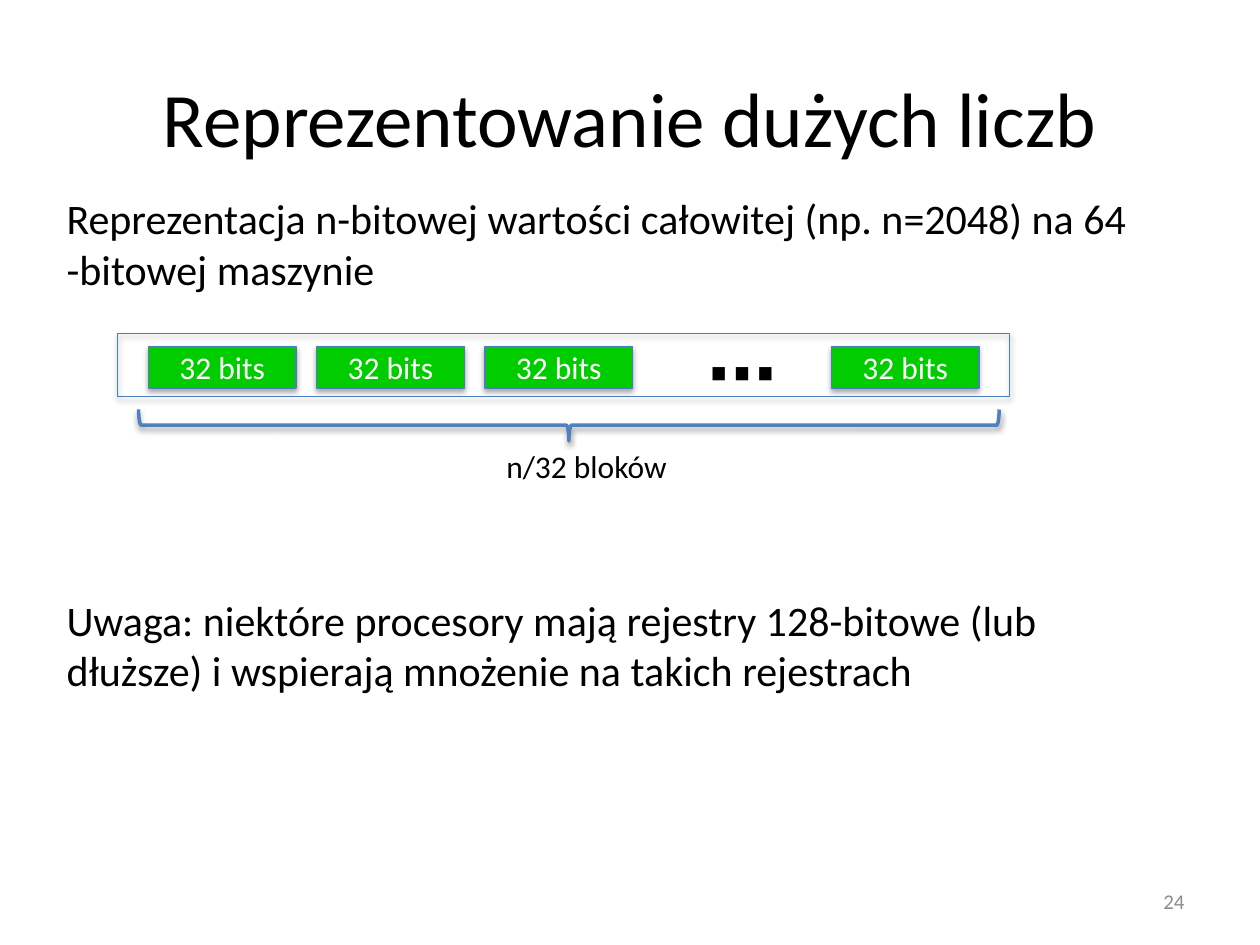
import dataclasses

import pptx
import pptx.dml.color
import pptx.enum.shapes
import pptx.enum.text
import pptx.oxml
import pptx.oxml.ns
import pptx.util
from pptx.util import Inches

ALIGN = pptx.enum.text.PP_ALIGN
ANCHOR = pptx.enum.text.MSO_ANCHOR
SHAPE = pptx.enum.shapes.MSO_SHAPE


@dataclasses.dataclass(frozen=True)
class Theme:
    font: str = "Calibri"
    ink: str = "000000"
    muted: str = "8C8C8C"
    light: str = "FFFFFF"
    block: str = "00CC00"
    outline: str = "4B7EBC"
    brace: str = "4F81BD"
    title_size: int = 44
    dots_size: int = 40
    body_size: int = 24
    label_size: int = 18
    number_size: int = 12


THEME = Theme()


def rgb(value):
    return pptx.dml.color.RGBColor.from_string(value)


def write(frame, paragraphs, size, color=THEME.ink, align=ALIGN.LEFT,
          anchor=ANCHOR.TOP, bold=False, wrap=True):
    """Fill a text frame and format all of its runs alike."""
    frame.text = "\n".join(paragraphs)
    frame.word_wrap = wrap
    frame.vertical_anchor = anchor
    for paragraph in frame.paragraphs:
        paragraph.alignment = align
        for run in paragraph.runs:
            run.font.name = THEME.font
            run.font.size = pptx.util.Pt(size)
            run.font.bold = bold
            run.font.color.rgb = rgb(color)


def add_text(slide, box, paragraphs, size, **style):
    frame = slide.shapes.add_textbox(*map(Inches, box)).text_frame
    write(frame, paragraphs, size, **style)
    return frame


def add_shadow(shape, opacity, distance):
    """Give a shape a soft shadow that falls straight down."""
    shape.shadow.inherit = False
    effects = shape._element.spPr.find(pptx.oxml.ns.qn("a:effectLst"))
    effects.append(pptx.oxml.parse_xml(
        f'<a:outerShdw {pptx.oxml.ns.nsdecls("a")} blurRad="{pptx.util.Pt(3.1)}" '
        f'dist="{pptx.util.Pt(distance)}" dir="5400000" rotWithShape="0">'
        f'<a:srgbClr val="{THEME.ink}"><a:alpha val="{opacity * 1000}"/></a:srgbClr>'
        '</a:outerShdw>'))


def add_outlined(slide, kind, box, line=THEME.outline, width=0.75, fill=None,
                 opacity=35, distance=1.8):
    shape = slide.shapes.add_shape(kind, *map(Inches, box))
    if fill:
        shape.fill.solid()
        shape.fill.fore_color.rgb = rgb(fill)
    else:
        shape.fill.background()
    shape.line.color.rgb = rgb(line)
    shape.line.width = pptx.util.Pt(width)
    add_shadow(shape, opacity, distance)
    return shape


def add_block(slide, left):
    block = add_outlined(slide, SHAPE.RECTANGLE, (left, 2.75, 1.17, 0.33),
                         fill=THEME.block)
    write(block.text_frame, ["32 bits"], THEME.label_size, color=THEME.light,
          align=ALIGN.CENTER, anchor=ANCHOR.MIDDLE)


def main():
    deck = pptx.Presentation()
    deck.slide_width, deck.slide_height = Inches(10), Inches(7.5)
    slide = deck.slides.add_slide(deck.slide_layouts.get_by_name("Title Only"))

    # Title and slide number
    title = slide.shapes.title
    title.left, title.top, title.width, title.height = map(Inches, (0.5, 0.3, 9, 1.25))
    write(title.text_frame, ["Reprezentowanie dużych liczb"], THEME.title_size,
          align=ALIGN.CENTER, anchor=ANCHOR.MIDDLE)
    add_text(slide, (7.17, 6.95, 2.33, 0.4), ["24"], THEME.number_size,
             color=THEME.muted, align=ALIGN.RIGHT, anchor=ANCHOR.MIDDLE)

    # Statement and remark, with room for the diagram between them
    body = add_text(slide, (0.43, 1.48, 9, 4.48), [
        "Reprezentacja n-bitowej wartości całowitej (np. n=2048) na 64 -bitowej maszynie",
        "Uwaga: niektóre procesory mają rejestry 128-bitowe (lub dłuższe) "
        "i wspierają mnożenie na takich rejestrach",
    ], THEME.body_size)
    body.paragraphs[1].space_before = pptx.util.Pt(172)

    # Blocks of the number: the first three, dots, and the last one
    first_left, pitch, last_left = 1.18, 1.335, 6.6
    for left in [first_left + pitch * i for i in range(3)] + [last_left]:
        add_block(slide, left)
    add_text(slide, (5.52, 2.56, 0.48, 0.77), ["⋯"], THEME.dots_size,
             bold=True, wrap=False)

    # Brace that counts the blocks
    brace = add_outlined(slide, SHAPE.RIGHT_BRACE, (4.39, -0.04, 0.25, 6.83),
                         line=THEME.brace, width=2, opacity=38, distance=1.6)
    brace.rotation = 90
    add_text(slide, (3.85, 3.5, 1.61, 0.4), ["n/32 bloków"], THEME.label_size,
             align=ALIGN.CENTER, wrap=False)

    # Frame around the whole number
    add_outlined(slide, SHAPE.RECTANGLE, (0.93, 2.65, 7.08, 0.5))

    deck.save("out.pptx")


if __name__ == "__main__":
    main()
